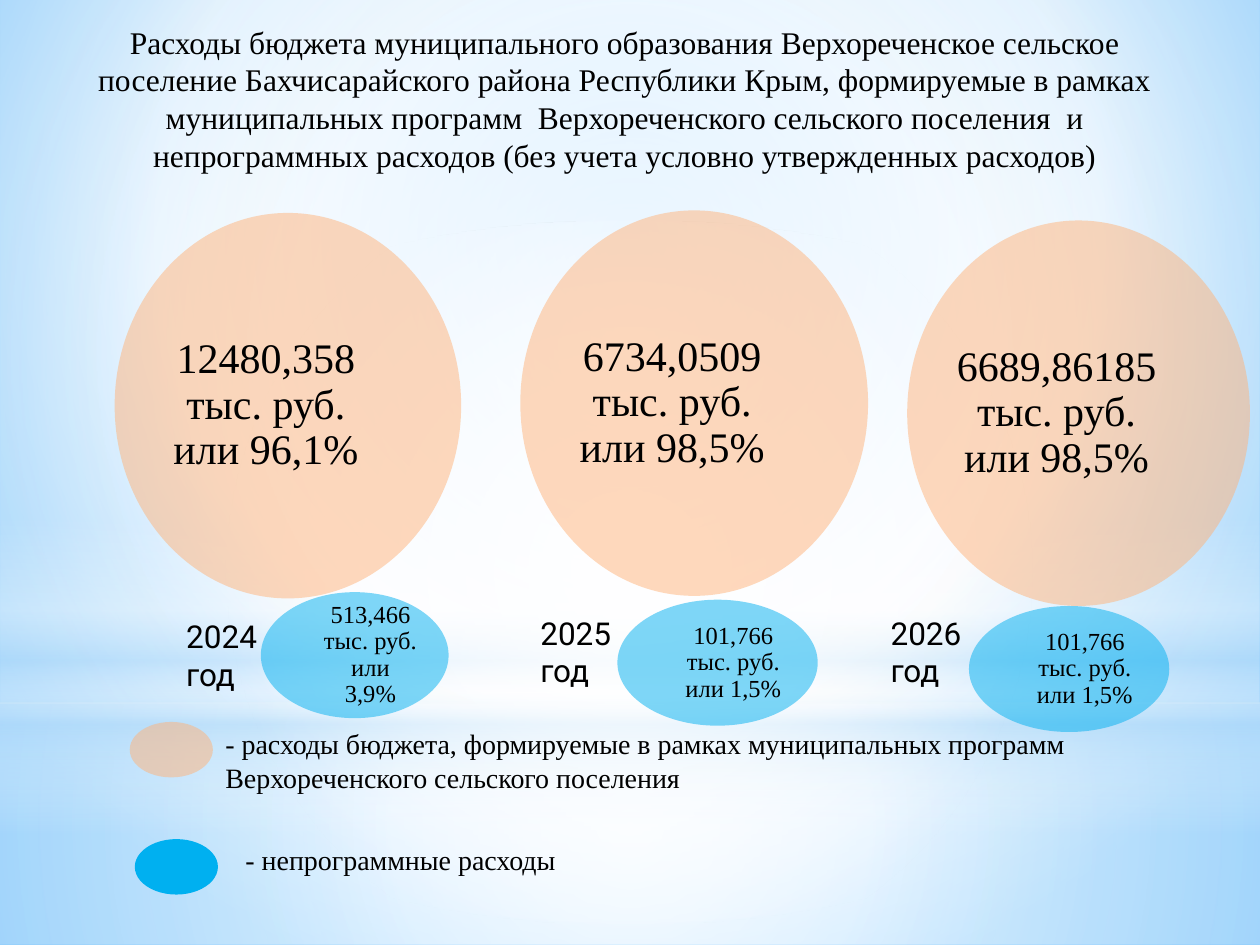
import pptx
import pptx.util
import pptx.enum.shapes
import pptx.enum.text
import pptx.dml.color
import pptx.oxml
import pptx.oxml.ns
import lxml.etree

WIDTH, HEIGHT = 10, 7.5
SERIF, SANS = "Times New Roman", "Roboto"
ROUNDNESS = 0.55
COLORS = {
    "program": "FFB37A",
    "other": "00B0F0",
    "text": "000000",
    "white": "FFFFFF",
    "haze": "B4DCFA",
    "sky": "9ED5FF",
    "edge": "5BB9FF",
}
CENTER = (50, 50, 50, 50)
TITLE = (
    "Расходы бюджета муниципального образования Верхореченское сельское "
    "поселение Бахчисарайского района Республики Крым, формируемые в рамках "
    "муниципальных программ  Верхореченского сельского поселения  и "
    "непрограммных расходов (без учета условно утвержденных расходов)"
)
GLOWS = [
    ("RECTANGLE", 5.58, 1.92, [(0, "white", 91), (37, "white", 76), (100, "haze", 79)], CENTER),
    ("RECTANGLE", 0, 5.58, [(0, "white", 89), (48, "white", 62), (100, "haze", 79)], CENTER),
    ("RECTANGLE", 4.12, 2.5, [(0, "white", 0), (29, "white", 30), (45, "haze", 40),
                              (55, "white", 26), (65, "haze", 60), (100, "white", 0)], None),
    ("OVAL", 1.75, 5.58, [(0, "white", 100), (56, "white", 0)], CENTER),
]
YEARS = [
    ("2024 год", (1.38, 4.85, 1.1, 0.71),
     "12480,358 тыс. руб. или 96,1%", (0.91, 1.69, 2.75, 3.06),
     "513,466 тыс. руб. или 3,9%", (2.07, 4.7, 1.49, 1)),
    ("2025 год", (4.19, 4.82, 0.81, 0.71),
     "6734,0509 тыс. руб. или 98,5%", (4.13, 1.67, 2.76, 3.06),
     "101,766 тыс. руб. или 1,5%", (4.9, 4.76, 1.59, 1)),
    ("2026 год", (6.97, 4.82, 1.1, 0.71),
     "6689,86185 тыс. руб. или 98,5%", (7.2, 1.75, 2.72, 3.06),
     "101,766 тыс. руб. или 1,5%", (7.69, 4.81, 1.59, 1)),
]
LEGEND = [
    ("program", 50, (1.03, 5.73, 0.66, 0.44), (1.69, 5.72, 7.72, 0.64),
     "- расходы бюджета, формируемые в рамках муниципальных программ "
     "Верхореченского сельского поселения"),
    ("other", 100, (1.07, 6.66, 0.66, 0.44), (1.85, 6.64, 6.77, 0.37),
     "- непрограммные расходы"),
]


def inches(values):
    return [pptx.util.Inches(value) for value in values]


def add_tag(parent, name, **attributes):
    return lxml.etree.SubElement(parent, pptx.oxml.ns.qn(name), **attributes)


def set_alpha(color, percent):
    add_tag(color, "a:alpha", val=str(percent * 1000))


def set_gradient(fill, holder, stops, focus):
    fill.solid()
    solid = holder.find(pptx.oxml.ns.qn("a:solidFill"))
    gradient = pptx.oxml.parse_xml(
        f'<a:gradFill {pptx.oxml.ns.nsdecls("a")} rotWithShape="1"><a:gsLst/></a:gradFill>')
    for position, name, opacity in stops:
        stop = add_tag(gradient[0], "a:gs", pos=str(position * 1000))
        set_alpha(add_tag(stop, "a:srgbClr", val=COLORS[name]), opacity)
    if focus:
        route = add_tag(gradient, "a:path", path="circle")
        target = add_tag(route, "a:fillToRect")
        for side, share in zip("ltrb", focus):
            target.set(side, str(share * 1000))
    else:
        add_tag(gradient, "a:lin", ang="5400000", scaled="0")
    holder.replace(solid, gradient)


def paint(shape, name, opacity):
    shape.shadow.inherit = False
    shape.line.fill.background()
    shape.fill.solid()
    shape.fill.fore_color.rgb = pptx.dml.color.RGBColor.from_string(COLORS[name])
    if opacity < 100:
        set_alpha(shape.element.spPr.find(".//" + pptx.oxml.ns.qn("a:srgbClr")), opacity)


def write(frame, text, size, font, centered):
    frame.word_wrap = True
    frame.text = text
    para = frame.paragraphs[0]
    align = pptx.enum.text.PP_ALIGN
    para.alignment = align.CENTER if centered else align.LEFT
    for span in para.runs:
        span.font.size = pptx.util.Pt(size)
        span.font.name = font
        span.font.color.rgb = pptx.dml.color.RGBColor.from_string(COLORS["text"])
    return para


def add_label(page, place, text, size, font=SERIF, centered=False):
    box = page.shapes.add_textbox(*inches(place))
    write(box.text_frame, text, size, font, centered)


def add_glow(page, kind, top, height, stops, focus):
    preset = getattr(pptx.enum.shapes.MSO_SHAPE, kind)
    shape = page.shapes.add_shape(preset, *inches((0, top, WIDTH, height)))
    shape.shadow.inherit = False
    shape.line.fill.background()
    set_gradient(shape.fill, shape.element.spPr, stops, focus)


def round_corners(shape):
    point_tag = pptx.oxml.ns.qn("a:pt")
    start = shape.element.spPr.find(".//" + pptx.oxml.ns.qn("a:moveTo"))[0]
    begin = int(start.get("x")), int(start.get("y"))
    for index, line in enumerate(shape.element.spPr.findall(".//" + pptx.oxml.ns.qn("a:lnTo"))):
        finish = int(line[0].get("x")), int(line[0].get("y"))
        corner = (finish[0], begin[1]) if index % 2 else (begin[0], finish[1])
        curve = lxml.etree.Element(pptx.oxml.ns.qn("a:cubicBezTo"))
        for base, pull in ((begin, ROUNDNESS), (finish, ROUNDNESS), (finish, 0)):
            x, y = (round(a + pull * (b - a)) for a, b in zip(base, corner))
            lxml.etree.SubElement(curve, point_tag, x=str(x), y=str(y))
        line.getparent().replace(line, curve)
        begin = finish


def add_bubble(page, place, text, name, size, margins):
    left, top, width, height = inches(place)
    middle_x, middle_y = left + width // 2, top + height // 2
    builder = page.shapes.build_freeform(left, middle_y)
    builder.add_line_segments([(middle_x, top), (left + width, middle_y),
                               (middle_x, top + height), (left, middle_y)], close=True)
    bubble = builder.convert_to_shape()
    round_corners(bubble)
    paint(bubble, name, 50)
    frame = bubble.text_frame
    frame.vertical_anchor = pptx.enum.text.MSO_ANCHOR.MIDDLE
    (frame.margin_left, frame.margin_top,
     frame.margin_right, frame.margin_bottom) = inches(margins)
    write(frame, text, size, SERIF, True).line_spacing = 0.9


def add_legend_row(page, name, opacity, mark, place, text):
    oval = page.shapes.add_shape(pptx.enum.shapes.MSO_SHAPE.OVAL, *inches(mark))
    paint(oval, name, opacity)
    add_label(page, place, text, 16)


def main():
    deck = pptx.Presentation()
    deck.slide_width, deck.slide_height = inches((WIDTH, HEIGHT))
    page = deck.slides.add_slide(deck.slide_layouts[6])
    fill = page.background.fill
    fill.solid()
    holder = page.element.find(".//" + pptx.oxml.ns.qn("p:bgPr"))
    set_gradient(fill, holder,
                 [(0, "sky", 100), (60, "white", 100), (100, "edge", 100)], (20, 10, 20, 60))
    for glow in GLOWS:
        add_glow(page, *glow)
    add_label(page, (0.43, 0.13, 9.06, 1.31), TITLE, 18, centered=True)
    for row in LEGEND:
        add_legend_row(page, *row)
    for year, year_place, program, program_place, other, other_place in YEARS:
        add_label(page, year_place, year, 18, SANS)
        add_bubble(page, program_place, program, "program", 24, (0.34, 0.3, 0.69, 0.3))
        add_bubble(page, other_place, other, "other", 14, (0.49, 0.18, 0.24, 0.18))
    deck.save("out.pptx")


if __name__ == "__main__":
    main()
